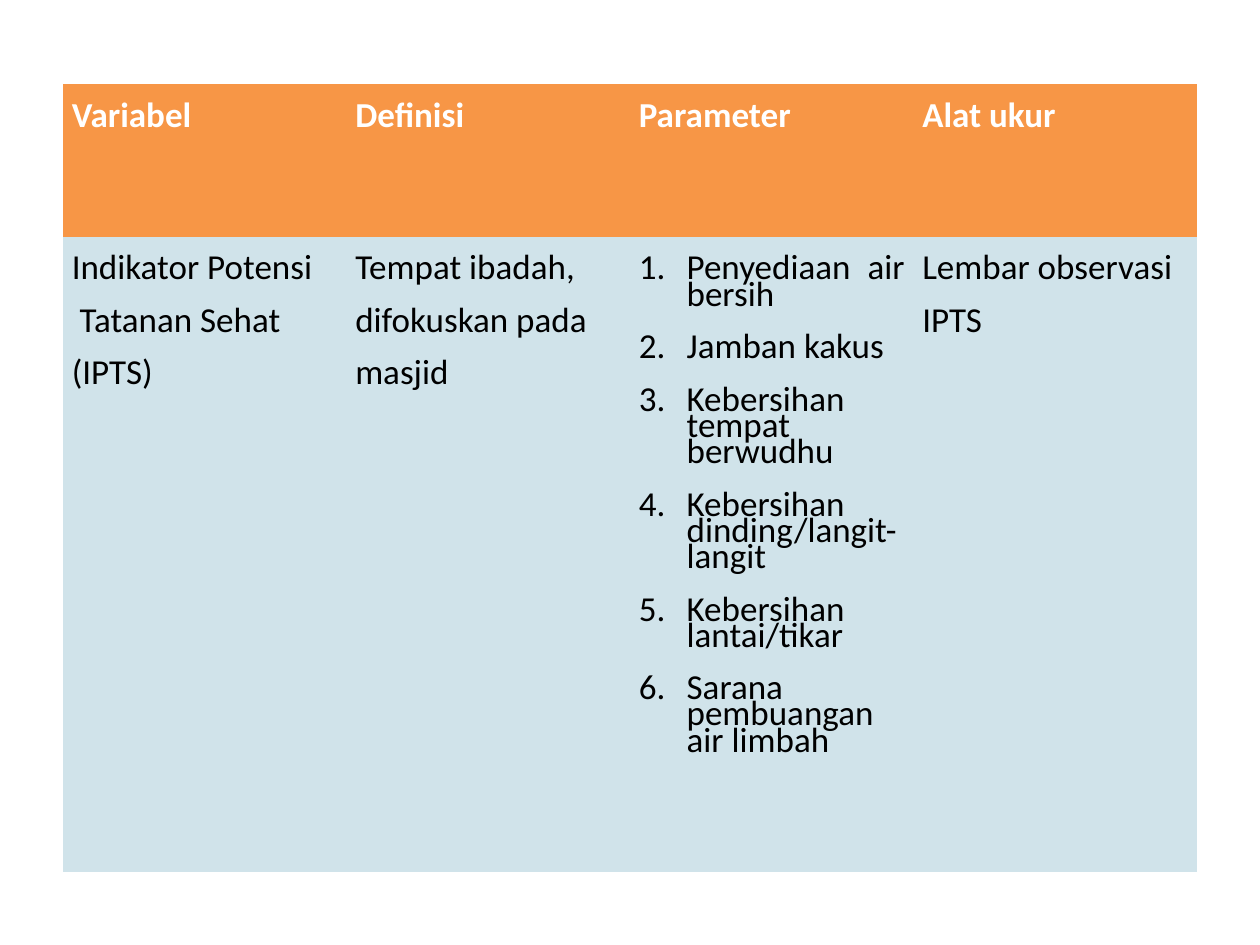
from lxml.etree import SubElement
from pptx import Presentation
from pptx.dml.color import RGBColor
from pptx.enum.text import PP_ALIGN
from pptx.oxml.ns import qn
from pptx.util import Inches, Pt

COLORS = {"header": "F79646", "body": "D0E3EA", "light": "FFFFFF", "dark": "000000"}
HEADERS = ["Variabel", "Definisi", "Parameter", "Alat ukur"]
DETAILS = [
    ["Indikator Potensi", " Tatanan Sehat ", "(IPTS)"],
    ["Tempat ibadah, ", "difokuskan pada ", "masjid"],
    [
        "Penyediaan air bersih",
        "Jamban kakus",
        "Kebersihan tempat berwudhu",
        "Kebersihan dinding/langit-langit",
        "Kebersihan lantai/tikar",
        "Sarana pembuangan air limbah",
    ],
    ["Lembar observasi ", "IPTS"],
]
NUMBERED_COLUMN = HEADERS.index("Parameter")
ROW_HEIGHTS = [1.21, 5.04]
COLUMN_WIDTH = 2.25
LINE = Pt(15)


def add_number(paragraph):
    properties = paragraph._p.get_or_add_pPr()
    properties.set("marL", str(Inches(0.38)))
    properties.set("indent", str(-Inches(0.38)))
    SubElement(properties, qn("a:buFont"), typeface="+mj-lt")
    SubElement(properties, qn("a:buAutoNum"), type="arabicPeriod")


def fill_cell(cell, lines, fill, color, bold=False, numbered=False):
    cell.fill.solid()
    cell.fill.fore_color.rgb = RGBColor.from_string(COLORS[fill])
    cell.margin_left = cell.margin_right = Inches(0.07)
    cell.margin_top, cell.margin_bottom = LINE, 0
    frame = cell.text_frame
    for index, line in enumerate(lines):
        paragraph = frame.add_paragraph() if index else frame.paragraphs[0]
        paragraph.text = line
        paragraph.alignment = PP_ALIGN.JUSTIFY
        paragraph.line_spacing = LINE
        paragraph.space_before = LINE if index else 0
        if numbered:
            add_number(paragraph)
        font = paragraph.font
        font.name, font.size, font.bold = "Calibri", Pt(20), bold
        font.color.rgb = RGBColor.from_string(COLORS[color])


deck = Presentation()
deck.slide_width, deck.slide_height = Inches(10), Inches(7.5)
page = deck.slides.add_slide(deck.slide_layouts[6])
table = page.shapes.add_table(
    len(ROW_HEIGHTS), len(HEADERS), Inches(0.5), Inches(0.67),
    Inches(COLUMN_WIDTH * len(HEADERS)), Inches(sum(ROW_HEIGHTS)),
).table
table.horz_banding = False
SubElement(table._tbl.tblPr, qn("a:tableStyleId")).text = "{2D5ABB26-0587-4C30-8999-92F81FD0307C}"
for style in table._tbl.tblPr.findall(qn("a:tableStyleId"))[:-1]:
    table._tbl.tblPr.remove(style)

for row, height in zip(table.rows, ROW_HEIGHTS):
    row.height = Inches(height)
for column, (header, details) in enumerate(zip(HEADERS, DETAILS)):
    table.columns[column].width = Inches(COLUMN_WIDTH)
    fill_cell(table.cell(0, column), [header], "header", "light", bold=True)
    fill_cell(table.cell(1, column), details, "body", "dark", numbered=column == NUMBERED_COLUMN)

deck.save("out.pptx")
